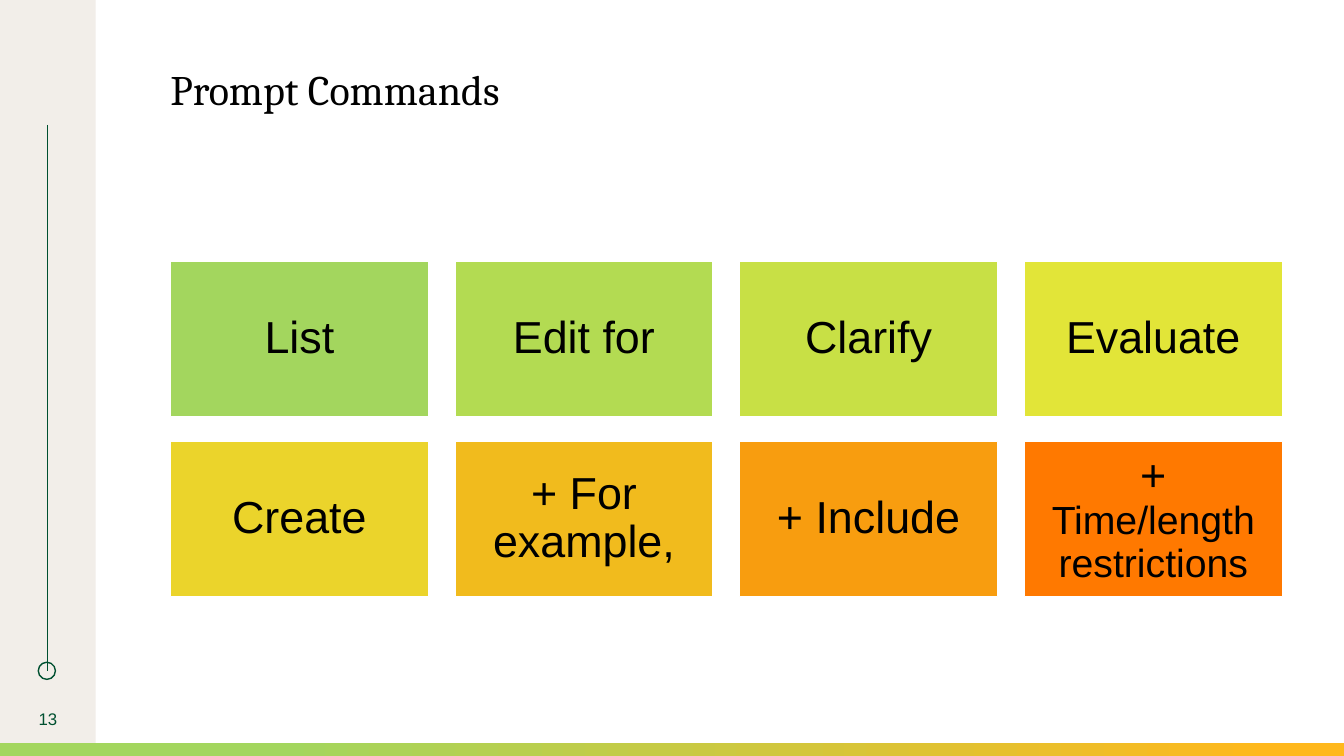
from pptx import Presentation
from pptx.dml.color import RGBColor
from pptx.enum.shapes import MSO_CONNECTOR, MSO_SHAPE
from pptx.enum.text import MSO_ANCHOR, PP_ALIGN
from pptx.oxml.ns import qn
from pptx.util import Inches, Pt
from lxml import etree

TITLE = "Prompt Commands"
PAGE_NUMBER = "13"
# Each command: fill colour, then its text runs with their size names
COMMANDS = [
    ("A3D65E", [("List", "command")]),
    ("B3DB52", [("Edit for", "command")]),
    ("C8E045", [("Clarify", "command")]),
    ("E2E538", [("Evaluate", "command")]),
    ("EBD42B", [("Create", "command")]),
    ("F1BB1D", [("+ For example,", "command")]),
    ("F89D0F", [("+ Include", "command")]),
    ("FF7900", [("+ ", "command"), ("Time/length restrictions", "long_command")]),
]
THEME = {
    "colors": {"text": "000000", "accent": "005030", "sidebar": "F2EEE9",
               "outline": "FFFFFF", "band_right": "FFB81C", "band_left": "A3D65E"},
    "sizes": {"title": 30, "page": 12, "command": 32, "long_command": 28},
    "fonts": {"heading": "Cambria", "body": "Arial"},
}
COLORS = THEME["colors"]

SLIDE_W, SLIDE_H = 13.33, 7.5
SIDEBAR_W = 0.95
COLUMNS = 4
GRID_LEFT, GRID_TOP = 1.69, 2.59
CARD_W, CARD_H = 2.56, 1.54
STEP_X, STEP_Y = 2.823, 1.79


def rgb(value):
    return RGBColor.from_string(value)


def write(holder, runs, *, font="body", color=COLORS["text"], align=PP_ALIGN.CENTER,
          anchor=MSO_ANCHOR.MIDDLE, inset=0.0, spacing=0.9, wrap=True):
    frame = holder.text_frame
    frame.word_wrap = wrap
    frame.vertical_anchor = anchor
    frame.margin_left = frame.margin_right = Inches(inset)
    frame.margin_top = frame.margin_bottom = Inches(inset)
    paragraph = frame.paragraphs[0]
    paragraph.alignment = align
    paragraph.line_spacing = spacing
    for text, size in runs:
        run = paragraph.add_run()
        run.text = text
        run.font.name = THEME["fonts"][font]
        run.font.size = Pt(THEME["sizes"][size])
        run.font.color.rgb = rgb(color)


def add_box(slide, left, top, width, height, *, kind=MSO_SHAPE.RECTANGLE,
            fill=None, outline=None):
    box = slide.shapes.add_shape(kind, Inches(left), Inches(top),
                                 Inches(width), Inches(height))
    box.shadow.inherit = False
    if fill:
        box.fill.solid()
        box.fill.fore_color.rgb = rgb(fill)
    else:
        box.fill.background()
    if outline:
        box.line.color.rgb = rgb(outline)
        box.line.width = Pt(1)
    else:
        box.line.fill.background()
    return box


def add_frame(slide):
    """Draw the sidebar with its marker line and the gradient band."""
    add_box(slide, 0, 0, SIDEBAR_W, SLIDE_H, fill=COLORS["sidebar"])
    marker = slide.shapes.add_connector(MSO_CONNECTOR.STRAIGHT, Inches(0.47),
                                        Inches(1.24), Inches(0.47), Inches(6.66))
    marker.line.color.rgb = rgb(COLORS["accent"])
    marker.line.width = Pt(1)
    etree.SubElement(marker._element.spPr, qn("a:effectLst"))
    add_box(slide, 0.38, 6.57, 0.17, 0.17, kind=MSO_SHAPE.OVAL, outline=COLORS["accent"])

    band = add_box(slide, 0, 7.37, SLIDE_W, 0.13)
    band.fill.gradient()
    band.fill.gradient_angle = 180
    stops = [(0.05, COLORS["band_right"]), (0.79, COLORS["band_left"])]
    for stop, (position, color) in zip(band.fill.gradient_stops, stops):
        stop.position = position
        stop.color.rgb = rgb(color)


def add_commands(slide):
    for index, (fill, runs) in enumerate(COMMANDS):
        row, column = divmod(index, COLUMNS)
        card = add_box(slide, GRID_LEFT + column * STEP_X, GRID_TOP + row * STEP_Y,
                       CARD_W, CARD_H, fill=fill, outline=COLORS["outline"])
        write(card, runs, inset=0.13)


def main():
    deck = Presentation()
    deck.slide_width, deck.slide_height = Inches(SLIDE_W), Inches(SLIDE_H)
    slide = deck.slides.add_slide(deck.slide_layouts[6])
    add_frame(slide)
    title = slide.shapes.add_textbox(Inches(GRID_LEFT), Inches(0.69),
                                     Inches(4.12), Inches(0.45))
    write(title, [(TITLE, "title")], font="heading", align=PP_ALIGN.LEFT,
          anchor=MSO_ANCHOR.TOP, wrap=False)
    page = slide.shapes.add_textbox(0, Inches(6.93), Inches(SIDEBAR_W), Inches(0.4))
    write(page, [(PAGE_NUMBER, "page")], color=COLORS["accent"], spacing=1.0)
    add_commands(slide)
    deck.save("out.pptx")


if __name__ == "__main__":
    main()
